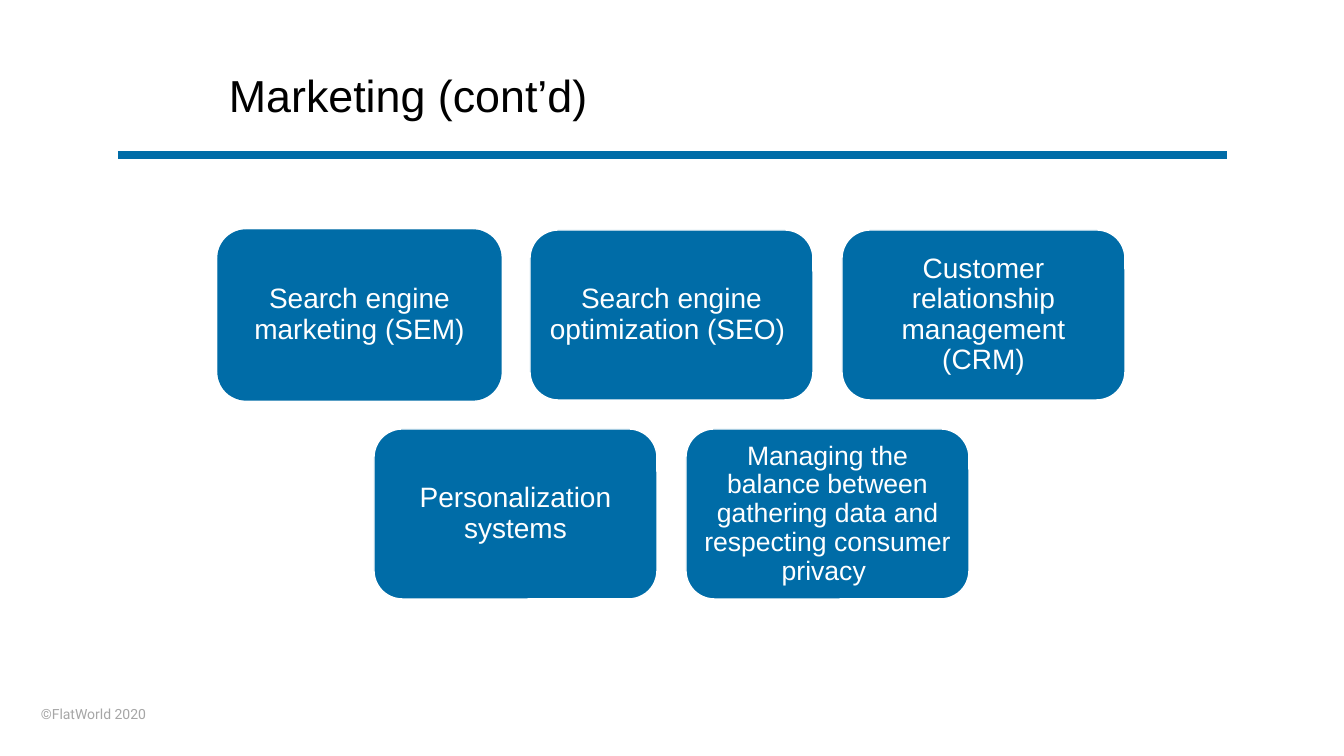
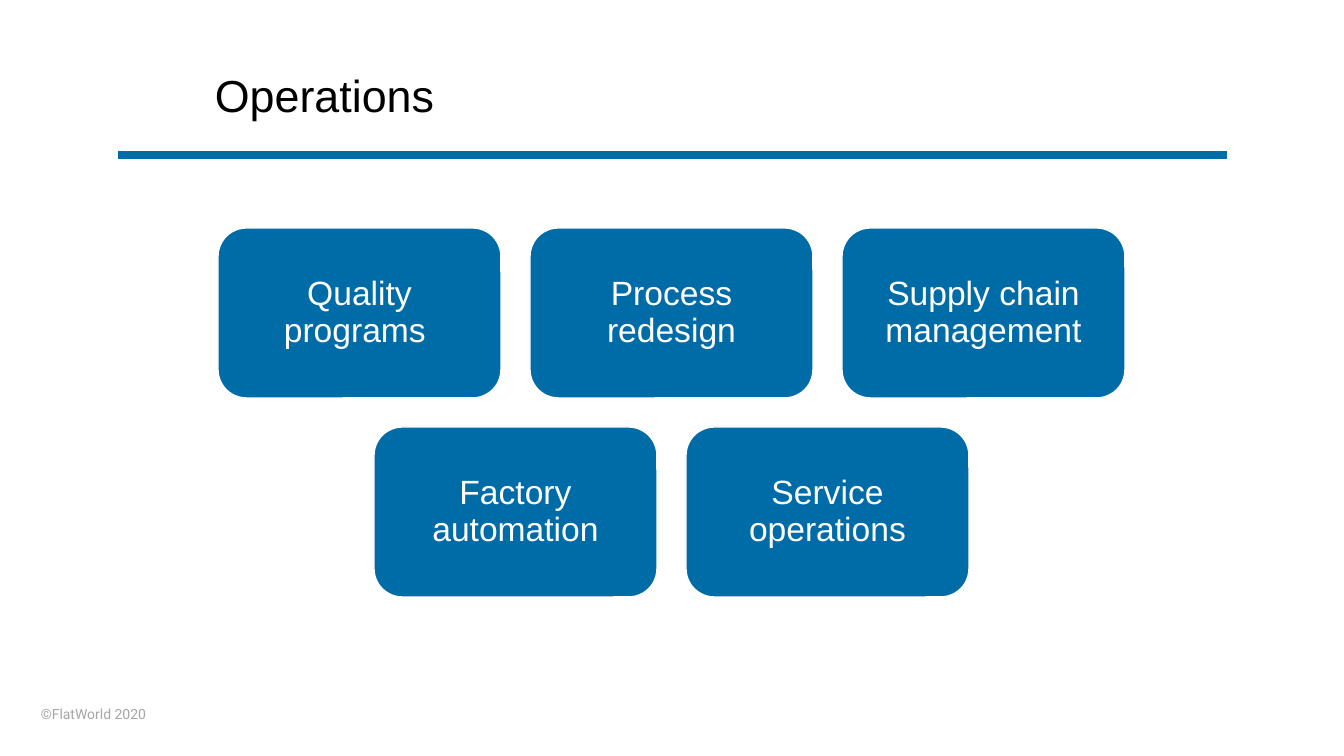
from lxml.etree import SubElement
from pptx import Presentation
from pptx.dml.color import RGBColor
from pptx.enum.shapes import MSO_CONNECTOR as Connector, MSO_SHAPE as Shape
from pptx.enum.text import MSO_ANCHOR as Anchor, PP_ALIGN as Align
from pptx.oxml.ns import qn
from pptx.util import Emu, Pt

SLIDE_WIDTH, SLIDE_HEIGHT = 1344, 756
EMU_PER_PX = 914400 / 100.8


def px(length):
    return Emu(round(length * EMU_PER_PX))


def color(code):
    return RGBColor.from_string(code)


class Deck:
    BLUE, WHITE, BLACK, GREY = "006CA7", "FFFFFF", "000000", "A6A6A6"
    BODY_FONT, FOOTER_FONT = "Arial", "Roboto"
    CARD_WIDTH, CARD_HEIGHT, CARD_GAP = 283, 170, 29

    def __init__(self):
        self.prs = Presentation()
        self.prs.slide_width = px(SLIDE_WIDTH)
        self.prs.slide_height = px(SLIDE_HEIGHT)
        self.slide = None

    def start_slide(self, title, title_left):
        self.slide = self.prs.slides.add_slide(self.prs.slide_layouts[6])
        self.label("©FlatWorld 2020", 31, 701, 284, 27, 10, self.GREY, self.FOOTER_FONT)
        self.label(title, title_left, 69, 980, 63, 32, self.BLACK, self.BODY_FONT, 0.9)
        self.rule(118, 1227, 155)

    def fill_text(self, frame, text, size, ink, font, spacing=None):
        frame.word_wrap = True
        paragraph = frame.paragraphs[0]
        paragraph.line_spacing = spacing
        run = paragraph.add_run()
        run.text = text
        run.font.name = font
        run.font.size = Pt(size)
        run.font.color.rgb = color(ink)
        return paragraph

    def label(self, text, left, top, width, height, size, ink, font, spacing=None):
        box = self.slide.shapes.add_textbox(px(left), px(top), px(width), px(height))
        self.fill_text(box.text_frame, text, size, ink, font, spacing)

    def rule(self, left, right, y):
        line = self.slide.shapes.add_connector(
            Connector.STRAIGHT, px(left), px(y), px(right), px(y))
        line.line.color.rgb = color(self.BLUE)
        line.line.width = Pt(6)
        SubElement(line._element.spPr, qn("a:effectLst"))

    def card(self, text, left, top, size, inset, outline):
        card = self.slide.shapes.add_shape(
            Shape.ROUNDED_RECTANGLE, px(left), px(top),
            px(self.CARD_WIDTH), px(self.CARD_HEIGHT))
        card.shadow.inherit = False
        card.fill.solid()
        card.fill.fore_color.rgb = color(self.BLUE)
        card.line.color.rgb = color(outline)
        card.line.width = Pt(1)
        frame = card.text_frame
        frame.vertical_anchor = Anchor.MIDDLE
        frame.margin_left = frame.margin_right = px(inset)
        frame.margin_top = frame.margin_bottom = px(inset)
        paragraph = self.fill_text(frame, text, size, self.WHITE, self.BODY_FONT, 0.9)
        paragraph.alignment = Align.CENTER

    def card_rows(self, rows, top, inset):
        for row_index, row in enumerate(rows):
            row_width = len(row) * (self.CARD_WIDTH + self.CARD_GAP) - self.CARD_GAP
            row_left = (SLIDE_WIDTH - row_width) // 2
            row_top = top + row_index * (self.CARD_HEIGHT + self.CARD_GAP)
            for column, (text, size, outline) in enumerate(row):
                left = row_left + column * (self.CARD_WIDTH + self.CARD_GAP)
                self.card(text, left, row_top, size, inset, outline)


def main():
    deck = Deck()
    blue, white = deck.BLUE, deck.WHITE

    deck.start_slide("Marketing (cont’d)", 219)
    marketing = [
        [("Search engine marketing (SEM)", 20, blue),
         ("Search engine optimization (SEO) ", 20, white),
         ("Customer relationship management (CRM)", 20, white)],
        [("Personalization systems", 20, white),
         ("Managing the balance between gathering data and "
          "respecting consumer privacy ", 19, white)],
    ]
    deck.card_rows(marketing, top=230, inset=8)

    deck.start_slide("Operations", 205)
    operations = [
        ["Quality programs ", "Process redesign", "Supply chain management"],
        ["Factory automation", "Service operations"],
    ]
    deck.card_rows(
        [[(text, 24, white) for text in row] for row in operations], top=228, inset=10)

    deck.prs.save("out.pptx")


if __name__ == "__main__":
    main()
